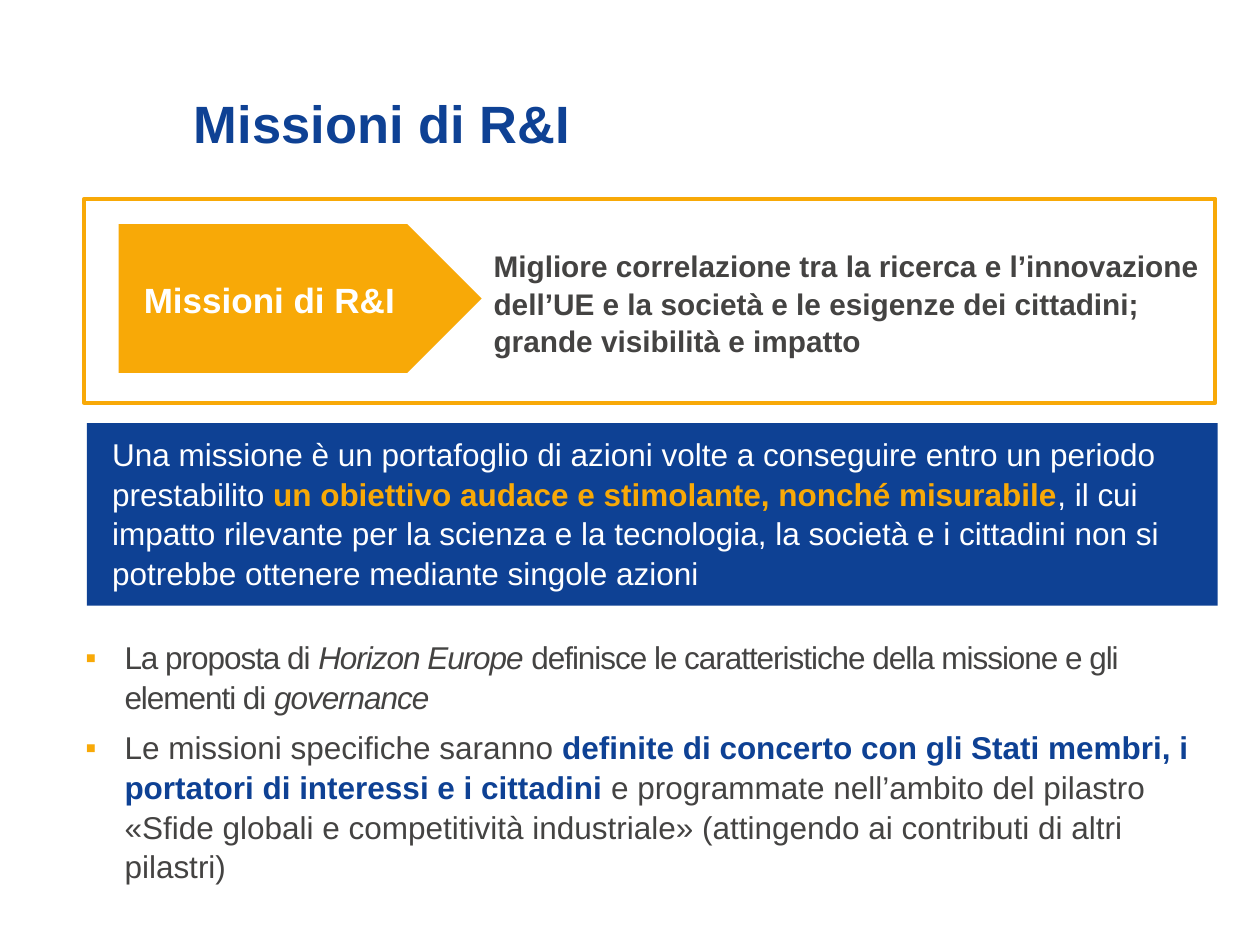
from lxml import etree
from pptx import Presentation
from pptx import util as u
from pptx.dml.color import RGBColor
from pptx.enum import shapes, text
from pptx.oxml.ns import qn

BLUE, ORANGE, GREY, WHITE = "0E4194", "F8A907", "444342", "FFFFFF"


def color(value):
    """Turn a hex string into a colour."""
    return RGBColor.from_string(value)


def place(shape, left, top, width, height):
    """Move and size a shape, in centimetres."""
    shape.left, shape.top = u.Cm(left), u.Cm(top)
    shape.width, shape.height = u.Cm(width), u.Cm(height)


def prepare_frame(shape, anchor, insets=(0.25, 0.13, 0.25, 0.13)):
    """Set wrapping, anchor and insets, and return the text frame."""
    frame = shape.text_frame
    frame.word_wrap = True
    frame.auto_size = text.MSO_AUTO_SIZE.NONE
    frame.vertical_anchor = anchor
    frame.margin_left, frame.margin_top, frame.margin_right, frame.margin_bottom = map(u.Cm, insets)
    return frame


def write(paragraph, runs, size, base, bold=None, line_spacing=1.05):
    """Fill a paragraph with (text, style) runs over a common font."""
    paragraph.alignment = text.PP_ALIGN.LEFT
    paragraph.line_spacing = line_spacing
    font = paragraph.font
    font.name, font.size, font.bold = "Arial", u.Pt(size), bold
    font.color.rgb = color(base)
    for content, style in runs:
        run = paragraph.add_run()
        run.text = content
        if "accent" in style:
            run.font.bold = True
            run.font.color.rgb = color(style["accent"])
        if "italic" in style:
            run.font.italic = True
        if "spacing" in style:
            run.font._element.set("spc", str(style["spacing"]))


def add_block(slide, kind, box, fill, line=None):
    """Add a flat preset shape."""
    shape = slide.shapes.add_shape(kind, *map(u.Cm, box))
    shape.shadow.inherit = False
    shape.fill.solid()
    shape.fill.fore_color.rgb = color(fill)
    if line:
        shape.line.color.rgb = color(line)
        shape.line.width = u.Pt(2.5)
    else:
        shape.line.fill.background()
    return shape


def add_bullet(paragraph):
    """Give a paragraph an orange square bullet and a hanging indent."""
    properties = paragraph._p.get_or_add_pPr()
    indent = u.Cm(0.79)
    properties.set("marL", str(indent))
    properties.set("indent", str(-indent))
    bullet_color = etree.SubElement(properties, qn("a:buClr"))
    etree.SubElement(bullet_color, qn("a:srgbClr"), val=ORANGE)
    etree.SubElement(properties, qn("a:buFont"), typeface="Arial")
    etree.SubElement(properties, qn("a:buChar"), char="▪")


def add_title(slide):
    """Fill the title placeholder."""
    title = slide.shapes.title
    place(title, 3.66, 1.7, 21.5, 1.9)
    frame = prepare_frame(title, text.MSO_ANCHOR.TOP)
    write(frame.paragraphs[0], [("Missioni di R&I", {})], 30, BLUE, True, 1)


def add_banner(slide):
    """Add the framed arrow and its message."""
    preset = shapes.MSO_SHAPE
    middle = text.MSO_ANCHOR.MIDDLE
    add_block(slide, preset.RECTANGLE, (1.7, 4.01, 22.8, 4.11), WHITE, ORANGE)
    arrow = add_block(slide, preset.PENTAGON, (2.39, 4.52, 7.32, 3), ORANGE)
    frame = prepare_frame(arrow, middle, (0.51, 0.13, 0.25, 0.13))
    write(frame.paragraphs[0], [("Missioni di R&I", {})], 20, WHITE, True)
    message = slide.shapes.add_textbox(*map(u.Cm, (9.7, 4.6, 14.81, 3)))
    frame = prepare_frame(message, middle)
    write(frame.paragraphs[0], [(
        "Migliore correlazione tra la ricerca e l’innovazione dell’UE e la società "
        "e le esigenze dei cittadini; grande visibilità e impatto", {})], 17, GREY, True)


def add_definition(slide):
    """Add the blue definition panel."""
    panel = add_block(slide, shapes.MSO_SHAPE.RECTANGLE, (1.75, 8.53, 22.8, 3.68), BLUE)
    frame = prepare_frame(panel, text.MSO_ANCHOR.TOP, (0.51, 0.2, 0.41, 0.13))
    write(frame.paragraphs[0], [
        ("Una missione è un portafoglio di azioni volte a conseguire entro un periodo prestabilito ", {}),
        ("un obiettivo audace e stimolante, nonché misurabile", {"accent": ORANGE}),
        (", il cui impatto rilevante per la scienza e la tecnologia, la società e i cittadini "
         "non si potrebbe ottenere mediante singole azioni", {}),
    ], 18, WHITE)


def add_list(slide):
    """Fill the body placeholder with the bulleted points."""
    tight = {"spacing": -60}
    tight_italic = {"spacing": -60, "italic": True}
    points = [
        [("La proposta di ", tight),
         ("Horizon Europe", tight_italic),
         (" definisce le caratteristiche della missione e gli elementi di ", tight),
         ("governance", tight_italic)],
        [("Le missioni specifiche saranno ", {}),
         ("definite di concerto con gli Stati membri, i portatori di interessi e i cittadini ",
          {"accent": BLUE}),
         ("e programmate nell’ambito del pilastro «Sfide globali e competitività industriale» "
          "(attingendo ai contributi di altri pilastri)", {})],
    ]
    body = slide.placeholders[1]
    place(body, 1.47, 12.7, 23, 5.84)
    frame = prepare_frame(body, text.MSO_ANCHOR.TOP)
    for index, runs in enumerate(points):
        paragraph = frame.add_paragraph() if index else frame.paragraphs[0]
        add_bullet(paragraph)
        paragraph.space_before = u.Pt(6 if index else 0)
        write(paragraph, runs, 18, GREY)


def main():
    """Build and save the slide."""
    presentation = Presentation()
    presentation.slide_width, presentation.slide_height = u.Cm(25.4), u.Cm(19.05)
    slide = presentation.slides.add_slide(presentation.slide_layouts[1])
    add_title(slide)
    add_banner(slide)
    add_definition(slide)
    add_list(slide)
    presentation.save("out.pptx")


if __name__ == "__main__":
    main()
